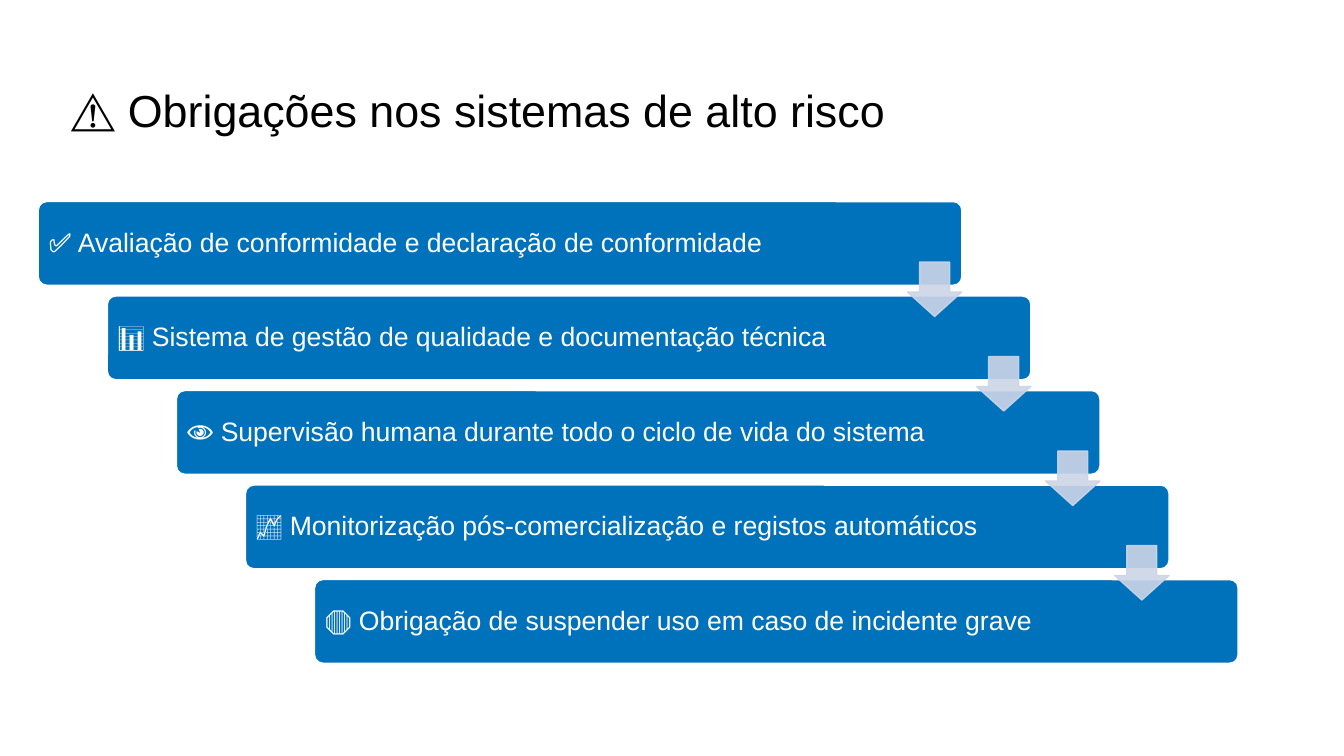
from lxml import etree
from pptx import Presentation
from pptx import util as u
from pptx.dml.color import RGBColor
from pptx.enum import shapes, text
from pptx.oxml import ns

PX = 9144  # 100 px to the inch
BLACK = RGBColor(0x00, 0x00, 0x00)
WHITE = RGBColor(0xFF, 0xFF, 0xFF)
BLUE = RGBColor(0x00, 0x71, 0xBB)
PALE = RGBColor(0xCC, 0xD5, 0xE7)

TITLE = "⚠️ Obrigações nos sistemas de alto risco"
DUTIES = [
    "✅ Avaliação de conformidade e declaração de conformidade",
    "📊 Sistema de gestão de qualidade e documentação técnica",
    "👁️ Supervisão humana durante todo o ciclo de vida do sistema",
    "📈 Monitorização pós-comercialização e registos automáticos",
    "🛑 Obrigação de suspender uso em caso de incidente grave",
]
BAR_WIDTH, BAR_HEIGHT = 916, 83
ARROW_SIZE, ARROW_DROP = 54, 60


def px(*lengths):
    return [u.Emu(round(length * PX)) for length in lengths]


def write(frame, words, size, color):
    frame.word_wrap = True
    frame.auto_size = text.MSO_AUTO_SIZE.NONE
    frame.vertical_anchor = text.MSO_ANCHOR.MIDDLE
    para = frame.paragraphs[0]
    para.alignment = text.PP_ALIGN.LEFT
    para.line_spacing = 0.9
    span = para.add_run()
    span.text = words
    span.font.name = "Arial"
    span.font.size = u.Pt(size)
    span.font.color.rgb = color


def add_title(page, box):
    title = page.shapes.title
    title.left, title.top, title.width, title.height = px(*box)
    write(title.text_frame, TITLE, 32, BLACK)


def add_block(group, kind, box, adjustments, fill, line):
    block = group.shapes.add_shape(kind, *px(*box))
    block.shadow.inherit = False
    for index, value in enumerate(adjustments):
        block.adjustments[index] = value
    block.fill.solid()
    block.fill.fore_color.rgb = fill
    block.line.color.rgb = line
    block.line.width = u.Pt(1)
    return block


def add_bar(group, left, top, words):
    bar = add_block(group, shapes.MSO_SHAPE.ROUNDED_RECTANGLE,
                    (left, top, BAR_WIDTH, BAR_HEIGHT), [0.1], BLUE, WHITE)
    frame = bar.text_frame
    frame.margin_left, frame.margin_top, frame.margin_right, frame.margin_bottom = px(8, 8, 8, 8)
    write(frame, words, 19, WHITE)


def add_arrow(group, left, top):
    arrow = add_block(group, shapes.MSO_SHAPE.DOWN_ARROW,
                      (left, top, ARROW_SIZE, ARROW_SIZE), [0.55, 0.45], PALE, PALE)
    # The order of adjustments is shaft width, then head length.
    for color in arrow.element.spPr.iter(ns.qn("a:srgbClr")):
        etree.SubElement(color, ns.qn("a:alpha"), val="90000")


def add_staircase(page, box):
    """Bars stepping down from the box's top left to its bottom right, linked by arrows."""
    left, top, width, height = box
    steps = len(DUTIES) - 1
    step_x = (width - BAR_WIDTH) / steps
    step_y = (height - BAR_HEIGHT) / steps
    corners = [(left + i * step_x, top + i * step_y) for i in range(len(DUTIES))]
    group = page.shapes.add_group_shape()
    for (x, y), words in zip(corners, DUTIES):
        add_bar(group, x, y, words)
    for x, y in corners[:-1]:
        add_arrow(group, x + BAR_WIDTH - ARROW_SIZE, y + ARROW_DROP)


def main():
    deck = Presentation()
    deck.slide_width, deck.slide_height = px(1333, 750)
    page = deck.slides.add_slide(deck.slide_layouts[5])
    add_title(page, (60, 40, 1028, 145))
    add_staircase(page, (38, 200, 1190, 458))
    deck.save("out.pptx")


if __name__ == "__main__":
    main()
